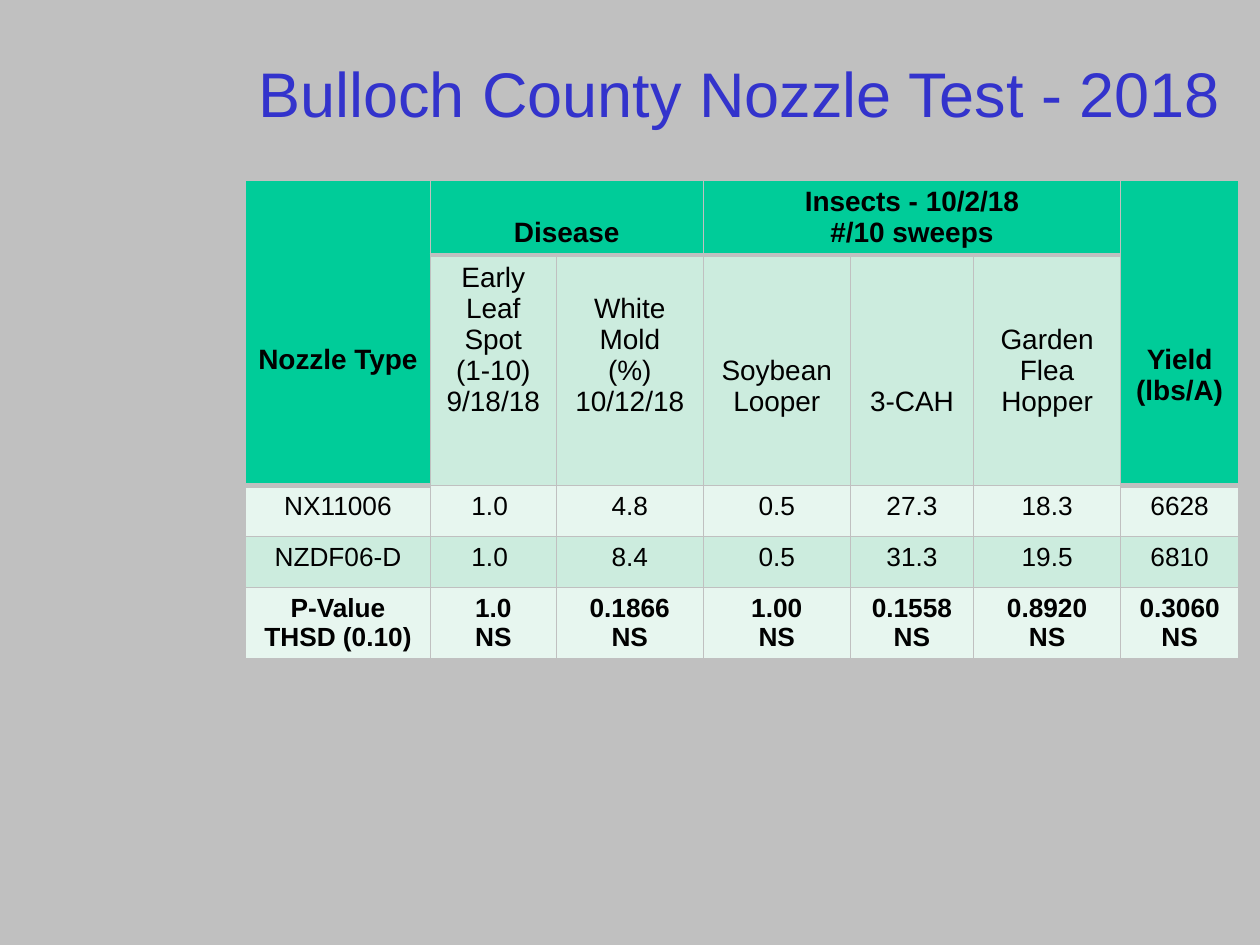
"""Build the nozzle test slide: a title above a table of trial results."""
from dataclasses import dataclass

from lxml import etree
from pptx import Presentation
from pptx.dml.color import RGBColor
from pptx.enum.text import MSO_ANCHOR, MSO_AUTO_SIZE, PP_ALIGN
from pptx.oxml.ns import qn
from pptx.util import Pt

CENTER, LEFT = PP_ALIGN.CENTER, PP_ALIGN.LEFT
TOP, MIDDLE, BOTTOM = MSO_ANCHOR.TOP, MSO_ANCHOR.MIDDLE, MSO_ANCHOR.BOTTOM
NO_AUTOFIT = MSO_AUTO_SIZE.NONE
TITLE_ONLY = 5


@dataclass(frozen=True)
class Theme:
    font: str = "Arial"
    background: str = "C0C0C0"
    title: str = "3333CC"
    text: str = "000000"
    header: str = "00CC99"
    band: str = "CCECDE"
    light: str = "E7F6EF"
    title_size: float = 36
    header_size: float = 16
    body_size: float = 15
    thin: float = 1
    thick: float = 3


@dataclass(frozen=True)
class TableCell:
    row: int
    column: int
    text: str
    fill: str
    size: float
    bold: bool = False
    row_span: int = 1
    column_span: int = 1
    anchor: MSO_ANCHOR = TOP
    bottom_margin: float = 3.6
    bottom_border: float = 1


THEME = Theme()
COLUMN_WIDTHS = (105.5, 72, 84, 84, 70.5, 84, 67.5)
ROW_HEIGHTS = (42.8, 131.6, 29.2, 29.2, 40.7)
TABLE_LEFT, TABLE_TOP = 140.4, 103
SIDE_MARGIN, TOP_MARGIN = 4, 3.6
SUBHEADER_BOTTOM = 38.6

SUBHEADERS = (
    "Early Leaf Spot\n(1-10)\n9/18/18",
    "White Mold\n(%)\n10/12/18",
    "Soybean\nLooper",
    "3-CAH",
    "Garden\nFlea\nHopper",
)
RESULTS = (
    ("NX11006", "1.0 ", "4.8", "0.5", "27.3", "18.3", "6628"),
    ("NZDF06-D", "1.0 ", "8.4", "0.5", "31.3", "19.5", "6810"),
)
P_VALUES = ("1.0", "0.1866", "1.00", "0.1558", "0.8920", "0.3060")
SUMMARY = ("P-Value\nTHSD (0.10)", *(f"{value}\nNS" for value in P_VALUES))


def header_cell(column: int, text: str, row_span: int, column_span: int,
                bottom_margin: float = 3.6) -> TableCell:
    """Describe a bold green header cell with a thick lower border."""
    return TableCell(0, column, text, THEME.header, THEME.header_size, True,
                     row_span, column_span, BOTTOM, bottom_margin, THEME.thick)


def table_cells() -> list[TableCell]:
    """List every visible cell of the results table."""
    cells = [
        header_cell(0, "Nozzle Type", 2, 1, 63),
        header_cell(1, "Disease", 1, 2),
        header_cell(3, "Insects - 10/2/18\n#/10 sweeps", 1, 3),
        header_cell(6, "Yield\n(lbs/A)", 2, 1, 45),
    ]
    cells += [
        TableCell(1, column, text, THEME.band, THEME.header_size,
                  anchor=BOTTOM, bottom_margin=SUBHEADER_BOTTOM)
        for column, text in enumerate(SUBHEADERS, start=1)
    ]
    for row, values in enumerate((*RESULTS, SUMMARY), start=2):
        fill = THEME.band if row % 2 else THEME.light
        cells += [
            TableCell(row, column, text, fill, THEME.body_size, values is SUMMARY)
            for column, text in enumerate(values)
        ]
    return cells


def format_text(text_frame, size: float, color: str, alignment: PP_ALIGN,
                bold: bool = False) -> None:
    """Apply one font and alignment to all text in a frame."""
    for paragraph in text_frame.paragraphs:
        paragraph.alignment = alignment
        for run in paragraph.runs:
            run.font.name = THEME.font
            run.font.size = Pt(size)
            run.font.bold = bold
            run.font.color.rgb = RGBColor.from_string(color)


def add_borders(cell, bottom_width: float) -> None:
    """Give a table cell borders in the background colour."""
    properties = cell._tc.get_or_add_tcPr()
    widths = {"lnL": THEME.thin, "lnR": THEME.thin,
              "lnT": THEME.thin, "lnB": bottom_width}
    for tag, width in widths.items():
        line = etree.SubElement(properties, qn(f"a:{tag}"), w=str(Pt(width)))
        fill = etree.SubElement(line, qn("a:solidFill"))
        etree.SubElement(fill, qn("a:srgbClr"), val=THEME.background)


def draw_cell(table, item: TableCell) -> None:
    """Fill, merge and format one cell of the table."""
    cell = table.cell(item.row, item.column)
    if item.row_span > 1 or item.column_span > 1:
        cell.merge(table.cell(item.row + item.row_span - 1,
                              item.column + item.column_span - 1))
    add_borders(cell, item.bottom_border)
    cell.fill.solid()
    cell.fill.fore_color.rgb = RGBColor.from_string(item.fill)
    cell.margin_left = cell.margin_right = Pt(SIDE_MARGIN)
    cell.margin_top = Pt(TOP_MARGIN)
    cell.margin_bottom = Pt(item.bottom_margin)
    cell.vertical_anchor = item.anchor
    cell.text_frame.text = item.text
    format_text(cell.text_frame, item.size, THEME.text, CENTER, item.bold)


def draw_title(slide, text: str) -> None:
    """Place and format the slide title."""
    title = slide.shapes.title
    title.left, title.top, title.width, title.height = (
        Pt(140.4), Pt(8), Pt(574), Pt(90))
    text_frame = title.text_frame
    text_frame.text = text
    text_frame.word_wrap = True
    text_frame.auto_size = NO_AUTOFIT
    text_frame.vertical_anchor = MIDDLE
    format_text(text_frame, THEME.title_size, THEME.title, LEFT)


def draw_table(slide) -> None:
    """Add the results table to the slide."""
    table = slide.shapes.add_table(
        len(ROW_HEIGHTS), len(COLUMN_WIDTHS), Pt(TABLE_LEFT), Pt(TABLE_TOP),
        Pt(sum(COLUMN_WIDTHS)), Pt(sum(ROW_HEIGHTS))).table
    table.first_row = table.horz_banding = False
    for column, width in zip(table.columns, COLUMN_WIDTHS):
        column.width = Pt(width)
    for row, height in zip(table.rows, ROW_HEIGHTS):
        row.height = Pt(height)
    for item in table_cells():
        draw_cell(table, item)


def main() -> None:
    """Create and save the presentation."""
    presentation = Presentation()
    presentation.slide_width, presentation.slide_height = Pt(720), Pt(540)
    slide = presentation.slides.add_slide(presentation.slide_layouts[TITLE_ONLY])
    slide.background.fill.solid()
    slide.background.fill.fore_color.rgb = RGBColor.from_string(THEME.background)
    draw_title(slide, "Bulloch County Nozzle Test - 2018")
    draw_table(slide)
    presentation.save("out.pptx")


if __name__ == "__main__":
    main()
